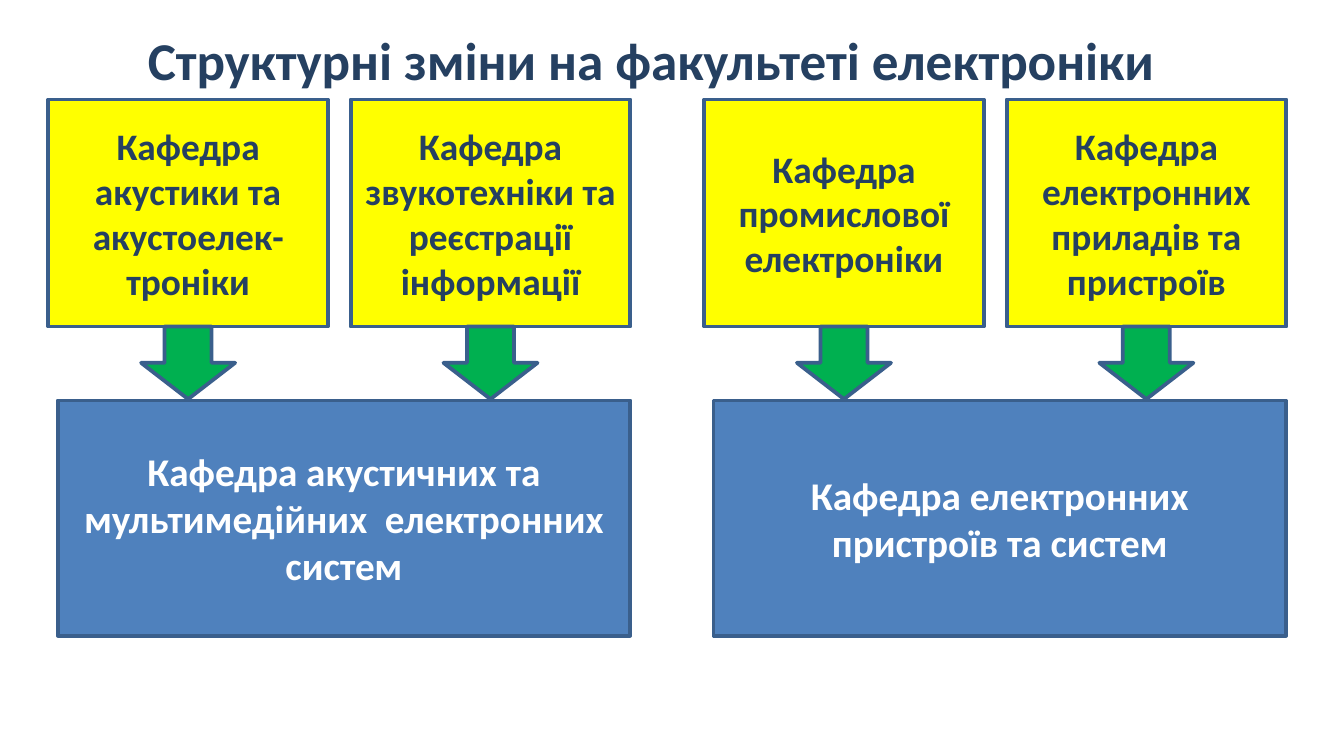
import pptx
import pptx.dml.color
import pptx.enum.shapes
import pptx.enum.text
import pptx.util

Inches = pptx.util.Inches
SHAPES = pptx.enum.shapes.MSO_SHAPE
ANCHORS = pptx.enum.text.MSO_ANCHOR

NAVY, WHITE, YELLOW = "254061", "FFFFFF", "FFFF00"
BLUE, GREEN, OUTLINE = "4F81BD", "00B050", "3A5F8C"

SLIDE_WIDTH = 10
SLIDE_HEIGHT = SLIDE_WIDTH * 9 / 16
HALF_STEP = 4.88
COLUMN_STEP = 2.25
OLD_LEFT, OLD_TOP = 0.36, 0.74
OLD_WIDTH, OLD_HEIGHT = 2.08, 1.69
ARROW_TOP = OLD_TOP + OLD_HEIGHT
ARROW_WIDTH, ARROW_HEIGHT = 0.7, 0.54
NEW_LEFT, NEW_TOP = 0.43, 2.98
NEW_WIDTH, NEW_HEIGHT = 4.26, 1.75

# Each new department with the old ones that merge into it
MERGERS = [
    ("Кафедра акустичних та мультимедійних  електронних систем",
     ["Кафедра акустики та акустоелек-троніки",
      "Кафедра звукотехніки та реєстрації інформації"]),
    ("Кафедра електронних пристроїв та систем",
     ["Кафедра промислової електроніки",
      "Кафедра електронних приладів та пристроїв"]),
]


def color(hex_value):
    return pptx.dml.color.RGBColor.from_string(hex_value)


def write_text(shape, text, size, hex_value, anchor):
    frame = shape.text_frame
    frame_format = {
        "word_wrap": True,
        "auto_size": pptx.enum.text.MSO_AUTO_SIZE.NONE,
        "vertical_anchor": anchor,
        "margin_left": Inches(0.08),
        "margin_right": Inches(0.08),
        "margin_top": Inches(0.04),
        "margin_bottom": Inches(0.04),
    }
    for name, value in frame_format.items():
        setattr(frame, name, value)
    para = frame.paragraphs[0]
    para.alignment = pptx.enum.text.PP_ALIGN.CENTER
    span = para.add_run()
    span.text = text
    font_format = {"name": "Calibri", "size": pptx.util.Pt(size), "bold": True}
    for name, value in font_format.items():
        setattr(span.font, name, value)
    span.font.color.rgb = color(hex_value)


def add_title(slide, text):
    title = slide.shapes.title
    place = {"left": 0.04, "top": 0.16, "width": 9.61, "height": 0.58}
    for name, value in place.items():
        setattr(title, name, Inches(value))
    write_text(title, text, 28.5, NAVY, ANCHORS.TOP)


def add_outlined_shape(slide, kind, left, top, width, height, fill):
    shape = slide.shapes.add_shape(
        kind, Inches(left), Inches(top), Inches(width), Inches(height))
    shape.shadow.inherit = False
    shape.fill.solid()
    shape.fill.fore_color.rgb = color(fill)
    shape.line.color.rgb = color(OUTLINE)
    shape.line.width = pptx.util.Pt(2)
    return shape


def add_old_department(slide, left, text):
    """Add a yellow box and the arrow that leads down from it."""
    box = add_outlined_shape(slide, SHAPES.RECTANGLE, left, OLD_TOP,
                             OLD_WIDTH, OLD_HEIGHT, YELLOW)
    write_text(box, text, 20, NAVY, ANCHORS.MIDDLE)
    arrow_left = left + (OLD_WIDTH - ARROW_WIDTH) / 2
    add_outlined_shape(slide, SHAPES.DOWN_ARROW, arrow_left, ARROW_TOP,
                       ARROW_WIDTH, ARROW_HEIGHT, GREEN)


def add_new_department(slide, left, text):
    box = add_outlined_shape(slide, SHAPES.RECTANGLE, left, NEW_TOP,
                             NEW_WIDTH, NEW_HEIGHT, BLUE)
    write_text(box, text, 21, WHITE, ANCHORS.MIDDLE)


def main():
    deck = pptx.Presentation()
    deck.slide_width = Inches(SLIDE_WIDTH)
    deck.slide_height = Inches(SLIDE_HEIGHT)
    slide = deck.slides.add_slide(deck.slide_layouts.get_by_name("Title Only"))
    add_title(slide, "Структурні зміни на факультеті електроніки")
    for half, (new_name, old_names) in enumerate(MERGERS):
        offset = half * HALF_STEP
        add_new_department(slide, NEW_LEFT + offset, new_name)
        for column, old_name in enumerate(old_names):
            left = OLD_LEFT + offset + column * COLUMN_STEP
            add_old_department(slide, left, old_name)
    deck.save("out.pptx")


if __name__ == "__main__":
    main()
